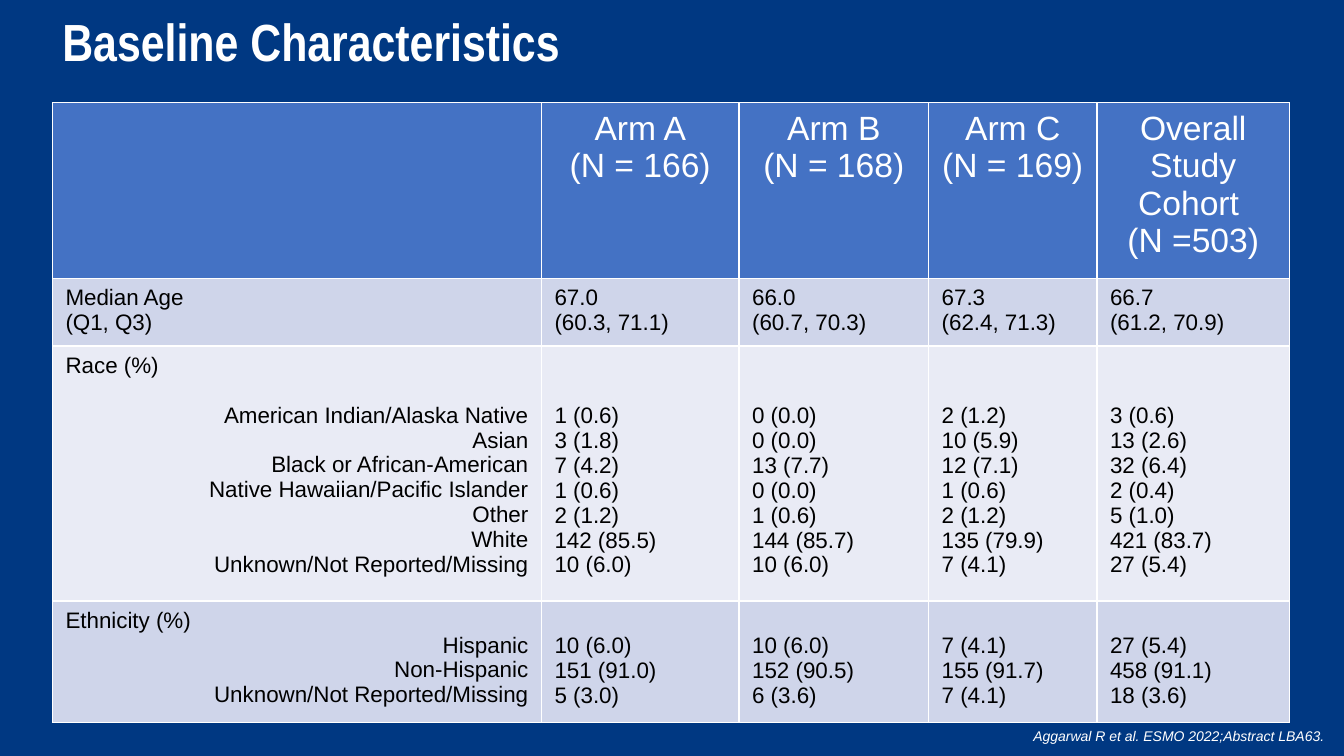
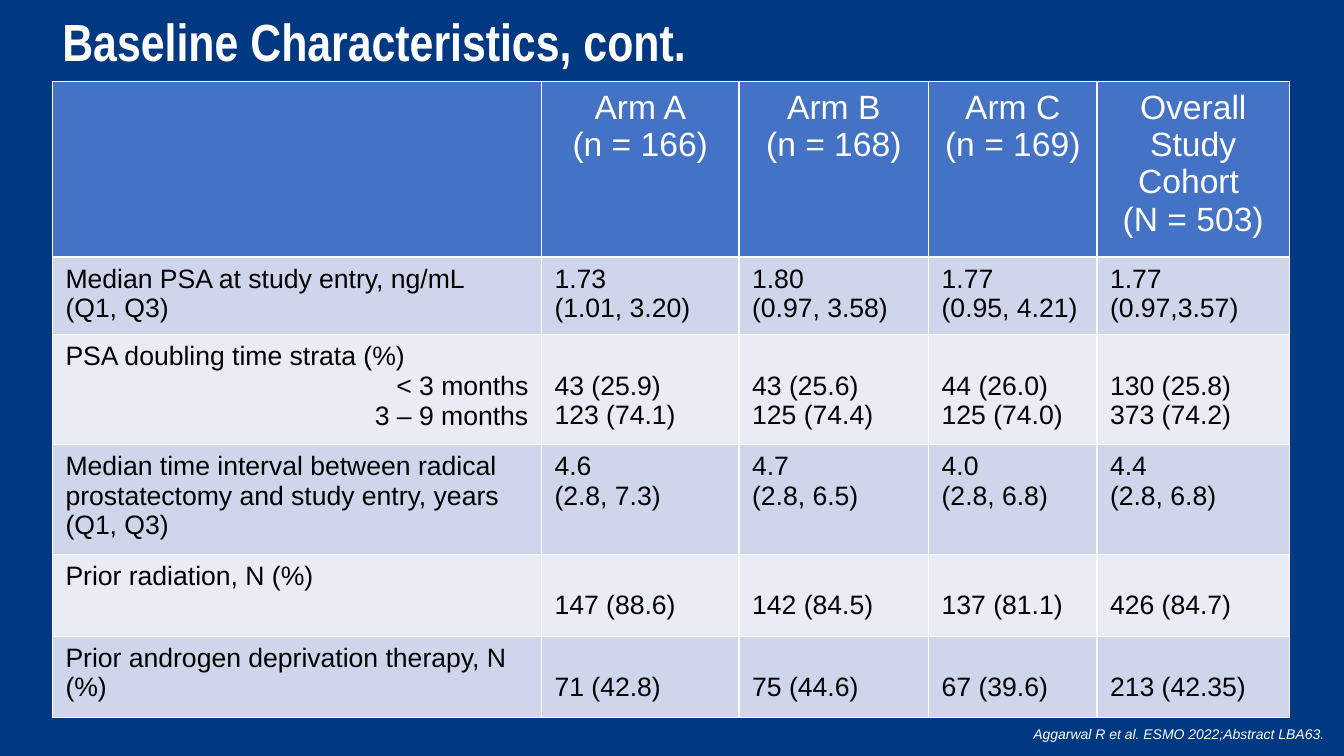
from dataclasses import dataclass

from lxml.etree import SubElement
from pptx import Presentation
from pptx.dml.color import RGBColor
from pptx.enum.text import MSO_ANCHOR, PP_ALIGN
from pptx.oxml.ns import qn
from pptx.util import Emu, Pt

PX = 9144
NAVY = RGBColor(0x00, 0x38, 0x82)
HEADER_BLUE = RGBColor(0x44, 0x72, 0xC4)
BANDS = (RGBColor(0xCF, 0xD5, 0xEA), RGBColor(0xE9, 0xEB, 0xF5))
WHITE = RGBColor(0xFF, 0xFF, 0xFF)
BLACK = RGBColor(0x00, 0x00, 0x00)

LEFT = 52
COLUMNS = (485, 196, 188, 167, 191)
WIDTH = sum(COLUMNS)
HEADER_HEIGHT = 173
CELL_INSETS = (13, 7, 13, 7)
LINE_SPACING = 1.117
CITATION = "Aggarwal R et al. ESMO 2022;Abstract LBA63."


@dataclass
class Row:
    """One table row: heading lines, value lines across the arms, and strata."""

    height: int
    heading: tuple
    values: tuple
    strata: tuple = ()
    skip: int = 0


BASELINE = (
    Row(67, ("Median Age", "(Q1, Q3)"), (
        ("67.0", "66.0", "67.3", "66.7"),
        ("(60.3, 71.1)", "(60.7, 70.3)", "(62.4, 71.3)", "(61.2, 70.9)"))),
    Row(253, ("Race (%)",), (
        ("1 (0.6)", "0 (0.0)", "2 (1.2)", "3 (0.6)"),
        ("3 (1.8)", "0 (0.0)", "10 (5.9)", "13 (2.6)"),
        ("7 (4.2)", "13 (7.7)", "12 (7.1)", "32 (6.4)"),
        ("1 (0.6)", "0 (0.0)", "1 (0.6)", "2 (0.4)"),
        ("2 (1.2)", "1 (0.6)", "2 (1.2)", "5 (1.0)"),
        ("142 (85.5)", "144 (85.7)", "135 (79.9)", "421 (83.7)"),
        ("10 (6.0)", "10 (6.0)", "7 (4.1)", "27 (5.4)")),
        ("American Indian/Alaska Native", "Asian", "Black or African-American",
         "Native Hawaiian/Pacific Islander", "Other", "White",
         "Unknown/Not Reported/Missing"), skip=2),
    Row(120, ("Ethnicity (%)",), (
        ("10 (6.0)", "10 (6.0)", "7 (4.1)", "27 (5.4)"),
        ("151 (91.0)", "152 (90.5)", "155 (91.7)", "458 (91.1)"),
        ("5 (3.0)", "6 (3.6)", "7 (4.1)", "18 (3.6)")),
        ("Hispanic", "Non-Hispanic", "Unknown/Not Reported/Missing"), skip=1),
)

DISEASE_HISTORY = (
    Row(76, ("Median PSA at study entry, ng/mL", "(Q1, Q3)"), (
        ("1.73", "1.80", "1.77", "1.77"),
        ("(1.01, 3.20)", "(0.97, 3.58)", "(0.95, 4.21)", "(0.97,3.57)"))),
    Row(107, ("PSA doubling time strata (%)",), (
        ("43 (25.9)", "43 (25.6)", "44 (26.0)", "130 (25.8)"),
        ("123 (74.1)", "125 (74.4)", "125 (74.0)", "373 (74.2)")),
        ("< 3 months", "3 – 9 months"), skip=1),
    Row(107, ("Median time interval between radical prostatectomy "
              "and study entry, years (Q1, Q3)",), (
        ("4.6", "4.7", "4.0", "4.4"),
        ("(2.8, 7.3)", "(2.8, 6.5)", "(2.8, 6.8)", "(2.8, 6.8)"))),
    Row(81, ("Prior radiation, N (%)",),
        (("147 (88.6)", "142 (84.5)", "137 (81.1)", "426 (84.7)"),), skip=1),
    Row(81, ("Prior androgen deprivation therapy, N (%)",),
        (("71 (42.8)", "75 (44.6)", "67 (39.6)", "213 (42.35)"),), skip=1),
)


def px(length):
    """Turn px into EMU."""
    return Emu(length * PX)


def set_insets(holder, insets):
    """Set the inner margins of a text frame or table cell."""
    (holder.margin_left, holder.margin_top,
     holder.margin_right, holder.margin_bottom) = map(px, insets)


def write(frame, lines, size=16, color=BLACK, font="Arial", bold=False, italic=False,
          align=PP_ALIGN.LEFT, spacing=None):
    """Fill a text frame with one formatted paragraph per line."""
    frame.text = "\n".join(lines)
    for paragraph in frame.paragraphs:
        paragraph.alignment = align
        paragraph.line_spacing = spacing
        style = paragraph.font
        style.name, style.size = font, Pt(size)
        style.bold, style.italic = bold, italic
        style.color.rgb = color


def add_text(slide, text, box, anchor=MSO_ANCHOR.TOP, **text_format):
    """Place a single line of text on the slide."""
    frame = slide.shapes.add_textbox(*map(px, box)).text_frame
    frame.word_wrap = True
    frame.vertical_anchor = anchor
    set_insets(frame, (10, 5, 10, 5))
    write(frame, [text], **text_format)


def paint_cell(cell, color):
    """Give a cell its insets, white borders and a solid fill."""
    set_insets(cell, CELL_INSETS)
    properties = cell._tc.get_or_add_tcPr()
    for side in ("lnL", "lnR", "lnT", "lnB"):
        border = SubElement(properties, qn(f"a:{side}"), w=str(Pt(1)))
        fill = SubElement(border, qn("a:solidFill"))
        SubElement(fill, qn("a:srgbClr"), val=str(WHITE))
    cell.fill.solid()
    cell.fill.fore_color.rgb = color


def write_label(cell, row, size):
    """Write the row heading with its strata aligned right below it."""
    write(cell.text_frame, row.heading + row.strata, size=size)
    strata = cell.text_frame.paragraphs[len(row.heading):]
    for paragraph in strata:
        paragraph.alignment = PP_ALIGN.RIGHT
    if strata and row.skip > 1:
        strata[0].space_before = Pt(round((row.skip - 1) * size * LINE_SPACING, 1))


def write_values(cells, row, size):
    """Write the values of each arm, level with their strata."""
    left, top, right, bottom = CELL_INSETS
    top += round(row.skip * size * LINE_SPACING * Pt(1) / PX)
    for cell, lines in zip(cells, zip(*row.values)):
        set_insets(cell, (left, top, right, bottom))
        write(cell.text_frame, lines, size=size)


def add_arm_table(slide, top, headers, rows, size):
    """Add the table comparing the study arms."""
    heights = [HEADER_HEIGHT] + [row.height for row in rows]
    table = slide.shapes.add_table(
        len(heights), len(COLUMNS), px(LEFT), px(top), px(WIDTH), px(sum(heights))).table
    table.first_row = table.horz_banding = False
    for column, width in zip(table.columns, COLUMNS):
        column.width = px(width)
    for index, (line, height) in enumerate(zip(table.rows, heights)):
        line.height = px(height)
        for cell in line.cells:
            paint_cell(cell, BANDS[(index - 1) % 2] if index else HEADER_BLUE)
    for index, header in enumerate(headers, 1):
        write(table.cell(0, index).text_frame, header, size=24, color=WHITE,
              align=PP_ALIGN.CENTER)
    for index, row in enumerate(rows, 1):
        label, *arms = table.rows[index].cells
        write_label(label, row, size)
        write_values(arms, row, size)


def add_slide(deck, title, top, counts, rows, size, citation_top):
    """Add a slide with title, arm table and citation."""
    slide = deck.slides.add_slide(deck.slide_layouts[6])
    add_text(slide, title, (LEFT, 15, WIDTH, 63), size=37.3, color=WHITE,
             font="Arial Narrow", bold=True, spacing=0.8, anchor=MSO_ANCHOR.MIDDLE)
    arms = ("Arm A", "Arm B", "Arm C", "Overall Study Cohort ")
    add_arm_table(slide, top, zip(arms, counts), rows, size)
    add_text(slide, CITATION, (1012, citation_top, 311, 27), size=10, color=WHITE,
             italic=True, align=PP_ALIGN.RIGHT)


def main():
    """Build and save the deck."""
    deck = Presentation()
    deck.slide_width, deck.slide_height = px(1333), px(750)
    background = deck.slide_master.background.fill
    background.solid()
    background.fore_color.rgb = NAVY
    add_slide(deck, "Baseline Characteristics", 102,
              ("(N = 166)", "(N = 168)", "(N = 169)", "(N =503)"), BASELINE, 16, 717)
    add_slide(deck, "Baseline Characteristics, cont.", 81,
              ("(n = 166)", "(n = 168)", "(n = 169)", "(N = 503)"), DISEASE_HISTORY, 19, 715)
    deck.save("out.pptx")


if __name__ == "__main__":
    main()
